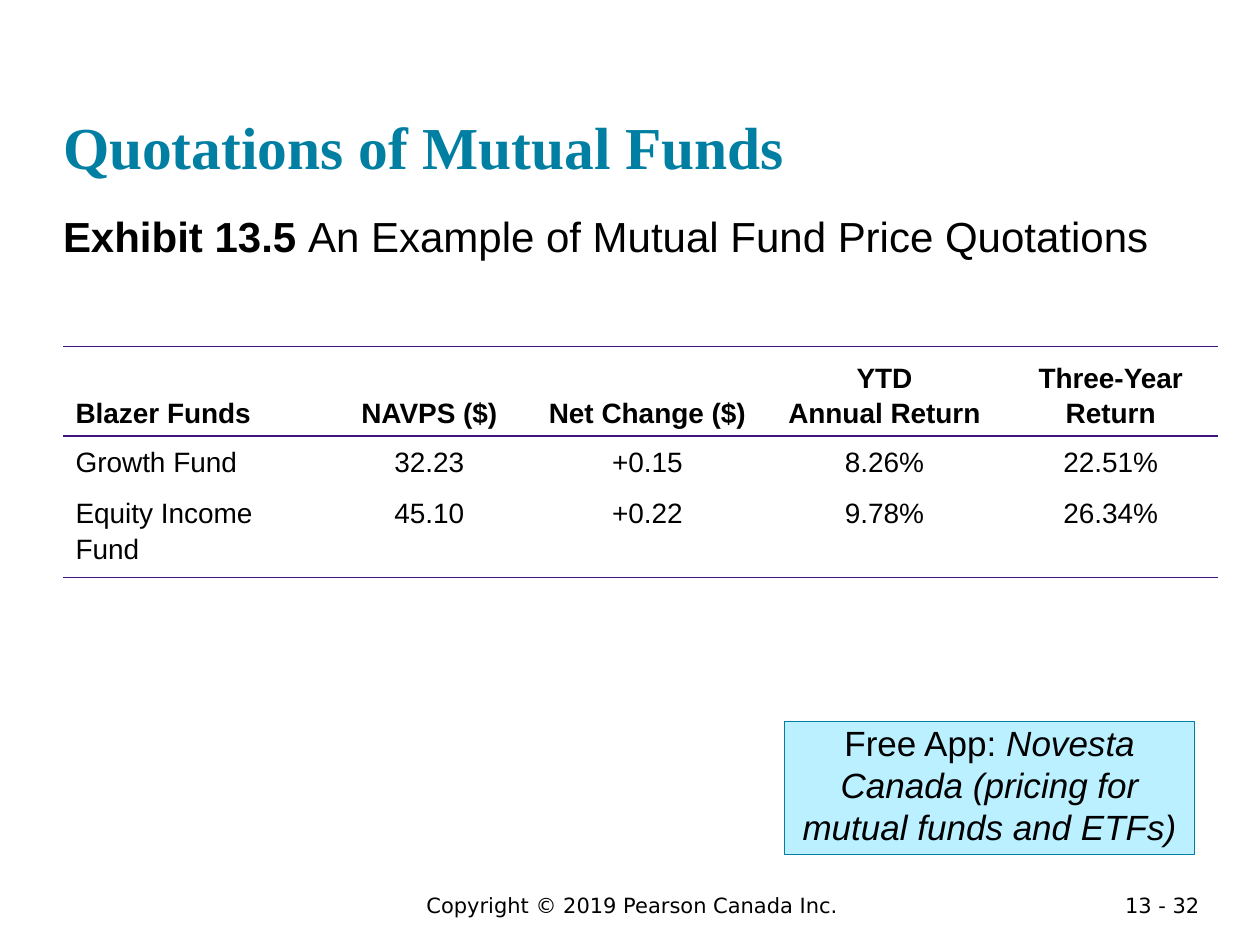
import pptx
import pptx.dml.color
import pptx.enum.text
import pptx.oxml
import pptx.oxml.ns
import pptx.util

Cm = pptx.util.Cm
Pt = pptx.util.Pt
ALIGN = pptx.enum.text.PP_ALIGN
ANCHOR = pptx.enum.text.MSO_ANCHOR

TEAL = "007FA3"
PURPLE = "3C1581"
PALE_BLUE = "BAF0FF"

QUOTES = [
    ["Blazer Funds", "NAVPS ($)", "Net Change ($)", "YTD\nAnnual Return", "Three-Year\nReturn"],
    ["Growth Fund", "32.23", "+0.15", "8.26%", "22.51%"],
    ["Equity Income Fund", "45.10", "+0.22", "9.78%", "26.34%"],
]
COLUMN_WIDTHS = [5.38, 4.01, 4.78, 4.78, 4.34]
ROW_HEIGHTS = [1.7, 1.04, 1.68]


def rgb(color):
    return pptx.dml.color.RGBColor.from_string(color)


def xml_element(markup):
    return pptx.oxml.parse_xml(markup.replace(">", f" {pptx.oxml.ns.nsdecls('a')}>", 1))


def add_span(para, text, size=12, font="Arial", color="000000", bold=False, italic=False):
    span = para.add_run()
    span.text = text
    span.font.name = font
    span.font.size = Pt(size)
    span.font.color.rgb = rgb(color)
    span.font.bold = bold
    span.font.italic = italic


def place(shape, box):
    shape.left, shape.top, shape.width, shape.height = (Cm(length) for length in box)


def prepare_placeholder(shape, box, align=ALIGN.LEFT, anchor=ANCHOR.TOP):
    """Move a placeholder, drop its insets and bullet, and return its paragraph."""
    place(shape, box)
    frame = shape.text_frame
    frame.margin_left = frame.margin_top = frame.margin_right = frame.margin_bottom = 0
    frame.word_wrap = True
    frame.auto_size = pptx.enum.text.MSO_AUTO_SIZE.NONE
    frame.vertical_anchor = anchor
    para = frame.paragraphs[0]
    para.alignment = align
    para.space_before = Pt(0)
    properties = para._p.get_or_add_pPr()
    properties.set("marL", "0")
    properties.set("indent", "0")
    properties.append(xml_element("<a:buNone></a:buNone>"))
    return para


def fill_title(page, box):
    para = prepare_placeholder(page.shapes.title, box, anchor=ANCHOR.BOTTOM)
    add_span(para, "Quotations of Mutual Funds", size=34, font="Times New Roman",
             color=TEAL, bold=True)


def fill_caption(page, box):
    para = prepare_placeholder(page.placeholders[1], box)
    add_span(para, "Exhibit 13.5 ", size=24, bold=True)
    add_span(para, "An Example of Mutual Fund Price Quotations", size=24)


def fill_app_note(page, box):
    note = page.placeholders[2]
    para = prepare_placeholder(note, box, align=ALIGN.CENTER)
    note.fill.solid()
    note.fill.fore_color.rgb = rgb(PALE_BLUE)
    note.line.color.rgb = rgb(TEAL)
    note.line.width = Pt(0.75)
    add_span(para, "Free App: ", size=20)
    add_span(para, "Novesta Canada (pricing for mutual funds and ETFs)", size=20, italic=True)


def set_borders(cell, ruled_sides):
    """Rule the named sides (L, R, T, B) of a cell and clear the others."""
    properties = cell._tc.get_or_add_tcPr()
    for position, side in enumerate("LRTB"):
        if side in ruled_sides:
            paint = f'<a:solidFill><a:srgbClr val="{PURPLE}"/></a:solidFill>'
        else:
            paint = "<a:noFill/>"
        border = xml_element(f'<a:ln{side} w="{Pt(1)}">{paint}</a:ln{side}>')
        properties.insert(position, border)


def add_quote_table(page, left, top):
    box = (left, top, sum(COLUMN_WIDTHS), sum(ROW_HEIGHTS))
    table = page.shapes.add_table(len(QUOTES), len(QUOTES[0]),
                                  *(Cm(length) for length in box)).table
    table.first_row = table.horz_banding = False
    for column, width in zip(table.columns, COLUMN_WIDTHS):
        column.width = Cm(width)
    for row, height in zip(table.rows, ROW_HEIGHTS):
        row.height = Cm(height)

    borders = ["TB", "T", "B"]
    for r, values in enumerate(QUOTES):
        for c, value in enumerate(values):
            cell = table.cell(r, c)
            cell.fill.background()
            set_borders(cell, borders[r])
            cell.vertical_anchor = ANCHOR.BOTTOM if r == 0 else ANCHOR.TOP
            frame = cell.text_frame
            for i, line in enumerate(value.split("\n")):
                para = frame.add_paragraph() if i else frame.paragraphs[0]
                para.alignment = ALIGN.CENTER if c else ALIGN.LEFT
                para.line_spacing = 1.15
                add_span(para, line, size=16, bold=r == 0)


def add_footer_text(page, box, text, align):
    frame = page.shapes.add_textbox(*(Cm(length) for length in box)).text_frame
    frame.word_wrap = True
    para = frame.paragraphs[0]
    para.alignment = align
    add_span(para, text, font="DejaVu Sans")


def main():
    deck = pptx.Presentation()
    deck.slide_width, deck.slide_height = Cm(25.4), Cm(19.05)
    page = deck.slides.add_slide(deck.slide_layouts.get_by_name("Two Content"))
    add_footer_text(page, (4.17, 17.86, 17.15, 0.76),
                    "Copyright © 2019 Pearson Canada Inc.", ALIGN.CENTER)
    add_footer_text(page, (21.89, 17.86, 2.54, 0.56), "13 - 32", ALIGN.RIGHT)
    fill_title(page, (1.27, 0.61, 22.86, 3.05))
    fill_caption(page, (1.27, 4.24, 22.86, 1.47))
    add_quote_table(page, 1.27, 6.98)
    fill_app_note(page, (15.82, 14.55, 8.26, 2.67))
    deck.save("out.pptx")


if __name__ == "__main__":
    main()
